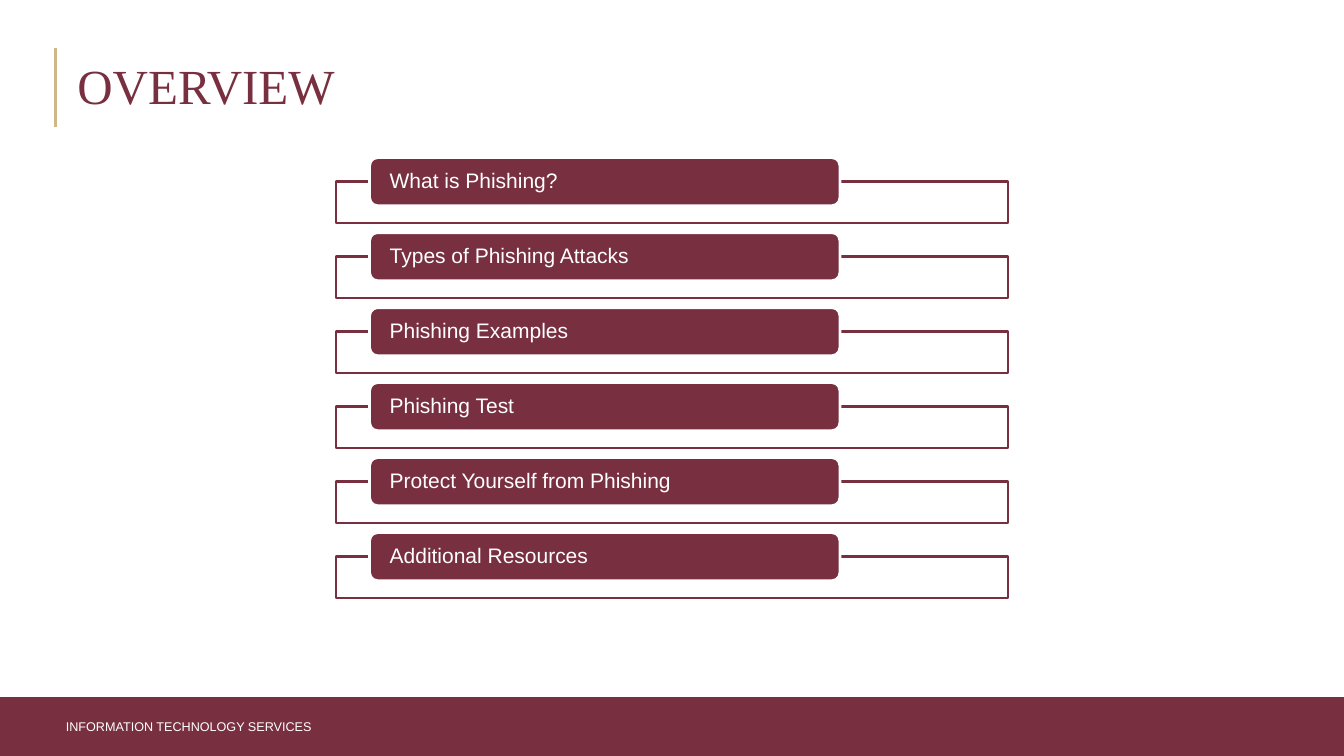
from lxml.etree import SubElement
from pptx import Presentation
from pptx.dml.color import RGBColor
from pptx.enum.shapes import MSO_CONNECTOR as Connector, MSO_SHAPE as Shape
from pptx.enum.text import MSO_ANCHOR as Anchor, PP_ALIGN as Align
from pptx.oxml.ns import qn
from pptx.util import Pt

GARNET, GOLD, WHITE = "782F40", "CEB888", "FFFFFF"
SANS, SERIF = "Arial", "Times New Roman"
TOPICS = [
    "What is Phishing?",
    "Types of Phishing Attacks",
    "Phishing Examples",
    "Phishing Test",
    "Protect Yourself from Phishing",
    "Additional Resources",
]


def color(hex_code):
    return RGBColor.from_string(hex_code)


def add_block(slide, kind, box, fill, outline=None):
    block = slide.shapes.add_shape(kind, *map(Pt, box))
    block.shadow.inherit = False
    block.fill.solid()
    block.fill.fore_color.rgb = color(fill)
    if outline:
        block.line.color.rgb = color(outline)
        block.line.width = Pt(2)
    else:
        block.line.fill.background()
    return block


def write(frame, words, size, font, ink):
    frame.word_wrap = True
    frame.vertical_anchor = Anchor.MIDDLE
    paragraph = frame.paragraphs[0]
    paragraph.alignment = Align.LEFT
    run = paragraph.add_run()
    run.text = words
    run.font.size = Pt(size)
    run.font.name = font
    run.font.color.rgb = color(ink)
    return paragraph


def add_heading(slide, left, top, width, height):
    rule = slide.shapes.add_connector(
        Connector.STRAIGHT, Pt(left), Pt(top), Pt(left), Pt(top + height))
    rule.line.color.rgb = color(GOLD)
    rule.line.width = Pt(1.75)
    SubElement(rule._element.spPr, qn("a:effectLst"))
    title = slide.shapes.add_textbox(
        Pt(left + 8.6), Pt(top + 2.4), Pt(width), Pt(48.2))
    write(title.text_frame, "OVERVIEW", 35, SERIF, GARNET)


def add_topic(slide, topic, left, top, width):
    tray = add_block(slide, Shape.RECTANGLE,
                     (left, top + 17.2, width, 29.6), WHITE, GARNET)
    tint = tray.fill._xPr.find(qn("a:solidFill"))[0]
    SubElement(tint, qn("a:alpha"), val="90000")
    label = add_block(slide, Shape.ROUNDED_RECTANGLE,
                      (left + width * 0.05, top, width * 0.7, 34.4), GARNET, WHITE)
    frame = label.text_frame
    frame.margin_left = frame.margin_right = Pt(12.7)
    frame.margin_top = frame.margin_bottom = 0
    write(frame, topic, 15, SANS, WHITE).line_spacing = 0.9


def add_topics(slide, left, top, width, height):
    pitch = height / len(TOPICS)
    for row, topic in enumerate(TOPICS):
        add_topic(slide, topic, left, top + row * pitch, width)


def add_footer(slide, left, top, width, height):
    add_block(slide, Shape.RECTANGLE, (left, top, width, height), GARNET)
    department = slide.shapes.add_textbox(
        Pt(left + 40), Pt(top + 12), Pt(272), Pt(18))
    write(department.text_frame, "INFORMATION TECHNOLOGY SERVICES", 9, SANS, WHITE)


def main():
    deck = Presentation()
    deck.slide_width, deck.slide_height = Pt(960), Pt(540)
    slide = deck.slides.add_slide(deck.slide_layouts[6])
    add_footer(slide, 0, 498, 960, 42)
    add_heading(slide, 39.6, 34.4, 864, 56.4)
    add_topics(slide, 240, 112.6, 480, 321.4)
    deck.save("out.pptx")


if __name__ == "__main__":
    main()
